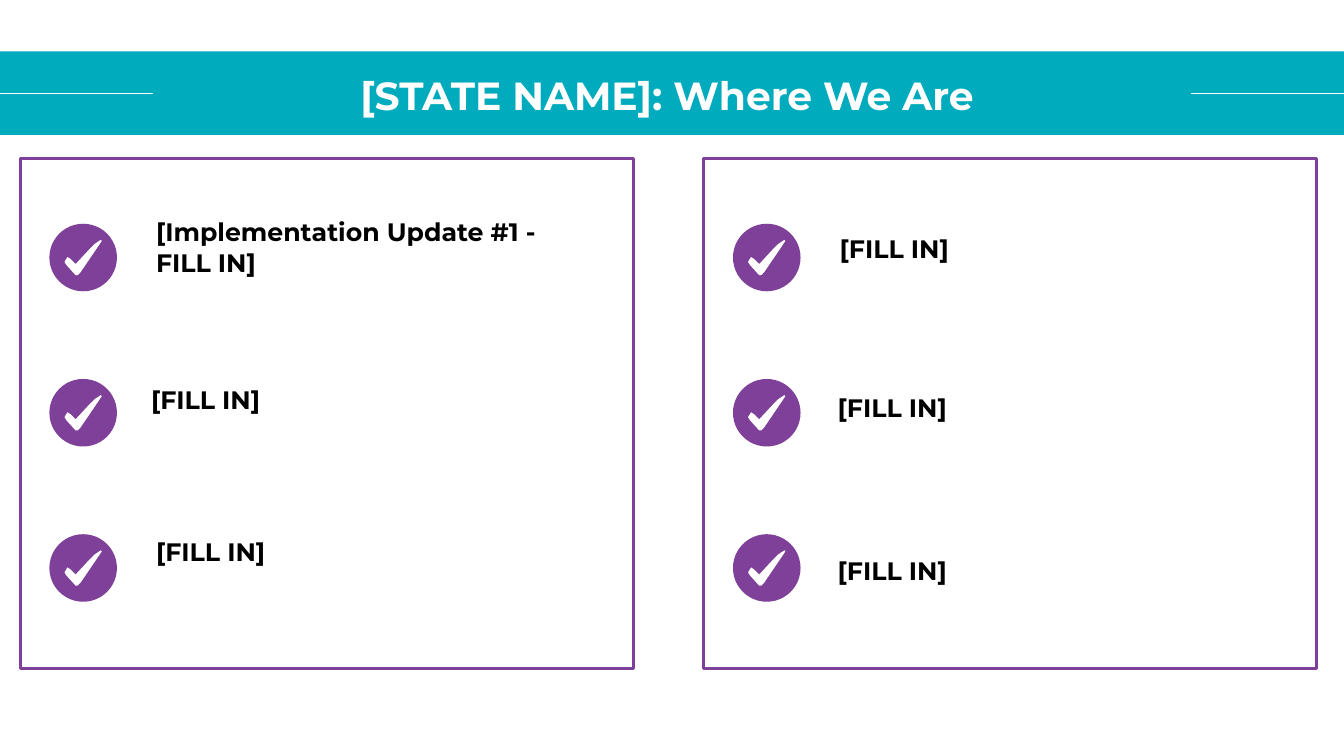
"""Build a status slide with two framed checklists below a title band."""
from dataclasses import dataclass

from lxml.etree import SubElement
from pptx import Presentation
from pptx.dml.color import RGBColor
from pptx.enum.shapes import MSO_CONNECTOR, MSO_SHAPE
from pptx.enum.text import MSO_ANCHOR, MSO_AUTO_SIZE, PP_ALIGN
from pptx.oxml.ns import qn
from pptx.util import Inches, Pt


@dataclass(frozen=True)
class Theme:
    face: str = "Montserrat"
    teal: str = "00ABBD"
    purple: str = "7E4098"
    white: str = "FFFFFF"
    black: str = "000000"
    title_size: float = 28
    item_size: float = 18
    frame_line: float = 2.25
    rule_line: float = 0.75


THEME = Theme()
WIDTH, HEIGHT = 13.33, 7.5
BAND_TOP, BAND_HEIGHT = 0.51, 0.83
RULE_LENGTH = 1.52
TITLE_LEFT, TITLE_WIDTH = 1.64, 10.06
PANEL_LEFT, PANEL_TOP, PANEL_PITCH = 0.2, 1.57, 6.78
PANEL_WIDTH, PANEL_HEIGHT = 6.08, 5.06
ROW_TOP, ROW_PITCH = 2.22, 1.54
BADGE_INDENT, BADGE_SIZE = 0.29, 0.67

TICK = [(0.48, 0.18), (0.45, 0.2), (0.39, 0.26), (0.26, 0.4), (0.21, 0.35),
        (0.18, 0.33), (0.16, 0.36), (0.15, 0.38), (0.17, 0.41), (0.26, 0.51),
        (0.28, 0.51), (0.3, 0.49), (0.31, 0.48), (0.5, 0.2), (0.52, 0.17),
        (0.51, 0.16)]

# Each item: wording, indent from the panel, shift from its row, height.
PANELS = [
    (4.4, [("[Implementation Update #1 - FILL IN]", 1.25, -0.12, 0.71),
           ("[FILL IN]", 1.2, 0, 0.4),
           ("[FILL IN]", 1.25, -0.03, 0.4)]),
    (4.82, [("[FILL IN]", 1.25, 0.05, 0.4),
            ("[FILL IN]", 1.23, 0.08, 0.4),
            ("[FILL IN]", 1.23, 0.16, 0.4)]),
]


def color(value):
    """Turn a hex value into a colour."""
    return RGBColor.from_string(value)


def paint(shape, fill=None, line=None):
    """Set the fill and outline of a shape and drop its shadow."""
    shape.shadow.inherit = False
    if fill:
        shape.fill.solid()
        shape.fill.fore_color.rgb = color(fill)
    else:
        shape.fill.background()
    if line:
        shape.line.color.rgb = color(line)
        shape.line.width = Pt(THEME.frame_line)
    else:
        shape.line.fill.background()


def add_block(page, kind, left, top, width, height, **look):
    """Draw a preset shape."""
    area = map(Inches, (left, top, width, height))
    paint(page.shapes.add_shape(kind, *area), **look)


def add_rule(page, start, end, height):
    """Draw a thin horizontal rule."""
    rule = page.shapes.add_connector(
        MSO_CONNECTOR.STRAIGHT, *map(Inches, (start, height, end, height)))
    rule.line.color.rgb = color(THEME.white)
    rule.line.width = Pt(THEME.rule_line)
    SubElement(rule.line._get_or_add_ln().getparent(), qn("a:effectLst"))


def write(frame, text, size, ink, **layout):
    """Write one bold paragraph into a text frame."""
    for name, value in layout.items():
        setattr(frame, name, value)
    para = frame.paragraphs[0]
    span = para.add_run()
    span.text = text
    style = {"name": THEME.face, "size": Pt(size), "bold": True}
    for name, value in style.items():
        setattr(span.font, name, value)
    span.font.color.rgb = color(ink)
    return para


def add_title(page, text):
    """Draw the title band with its rules and set the title on it."""
    add_block(page, MSO_SHAPE.RECTANGLE, 0, BAND_TOP, WIDTH, BAND_HEIGHT,
              fill=THEME.teal)
    middle = BAND_TOP + BAND_HEIGHT / 2
    for start in (0, WIDTH - RULE_LENGTH):
        add_rule(page, start, start + RULE_LENGTH, middle)
    title = page.shapes.title
    place = {"left": TITLE_LEFT, "top": BAND_TOP,
             "width": TITLE_WIDTH, "height": BAND_HEIGHT}
    for name, value in place.items():
        setattr(title, name, Inches(value))
    para = write(title.text_frame, text, THEME.title_size, THEME.white,
                 margin_left=0, margin_right=Inches(0.11),
                 margin_top=Inches(0.1), margin_bottom=0, word_wrap=True,
                 auto_size=MSO_AUTO_SIZE.NONE,
                 vertical_anchor=MSO_ANCHOR.MIDDLE)
    para.alignment = PP_ALIGN.CENTER
    para.line_spacing = 0.9
    page.shapes._spTree.append(title._element)


def add_badge(page, left, top):
    """Draw a round badge with a tick."""
    add_block(page, MSO_SHAPE.OVAL, left, top, BADGE_SIZE, BADGE_SIZE,
              fill=THEME.purple)
    outline = [(Inches(left + across), Inches(top + down))
               for across, down in TICK]
    builder = page.shapes.build_freeform(*outline[0])
    builder.add_line_segments(outline[1:], close=True)
    paint(builder.convert_to_shape(), fill=THEME.white)


def add_item(page, text, left, top, width, height):
    """Place the wording of one checklist item."""
    box = page.shapes.add_textbox(*map(Inches, (left, top, width, height)))
    write(box.text_frame, text, THEME.item_size, THEME.black, word_wrap=True,
          auto_size=MSO_AUTO_SIZE.SHAPE_TO_FIT_TEXT)


def add_panel(page, left, text_width, items):
    """Draw a framed checklist."""
    add_block(page, MSO_SHAPE.RECTANGLE, left, PANEL_TOP, PANEL_WIDTH,
              PANEL_HEIGHT, line=THEME.purple)
    for row, (text, indent, shift, height) in enumerate(items):
        top = ROW_TOP + row * ROW_PITCH
        add_badge(page, left + BADGE_INDENT, top)
        add_item(page, text, left + indent, top + shift, text_width, height)


def main():
    """Build and save the deck."""
    deck = Presentation()
    deck.slide_width, deck.slide_height = Inches(WIDTH), Inches(HEIGHT)
    page = deck.slides.add_slide(deck.slide_layouts[5])
    add_title(page, "[STATE NAME]: Where We Are")
    for column, (text_width, items) in enumerate(PANELS):
        add_panel(page, PANEL_LEFT + column * PANEL_PITCH, text_width, items)
    deck.save("out.pptx")


if __name__ == "__main__":
    main()
